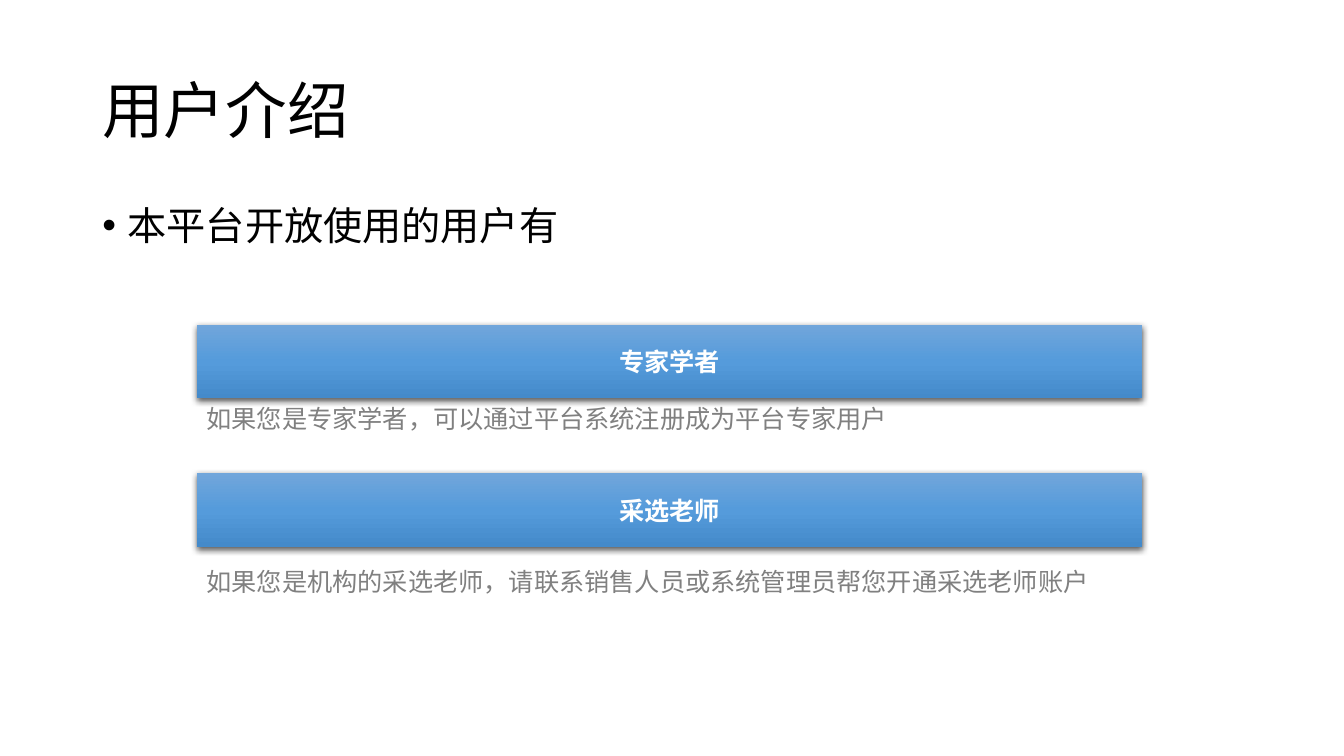
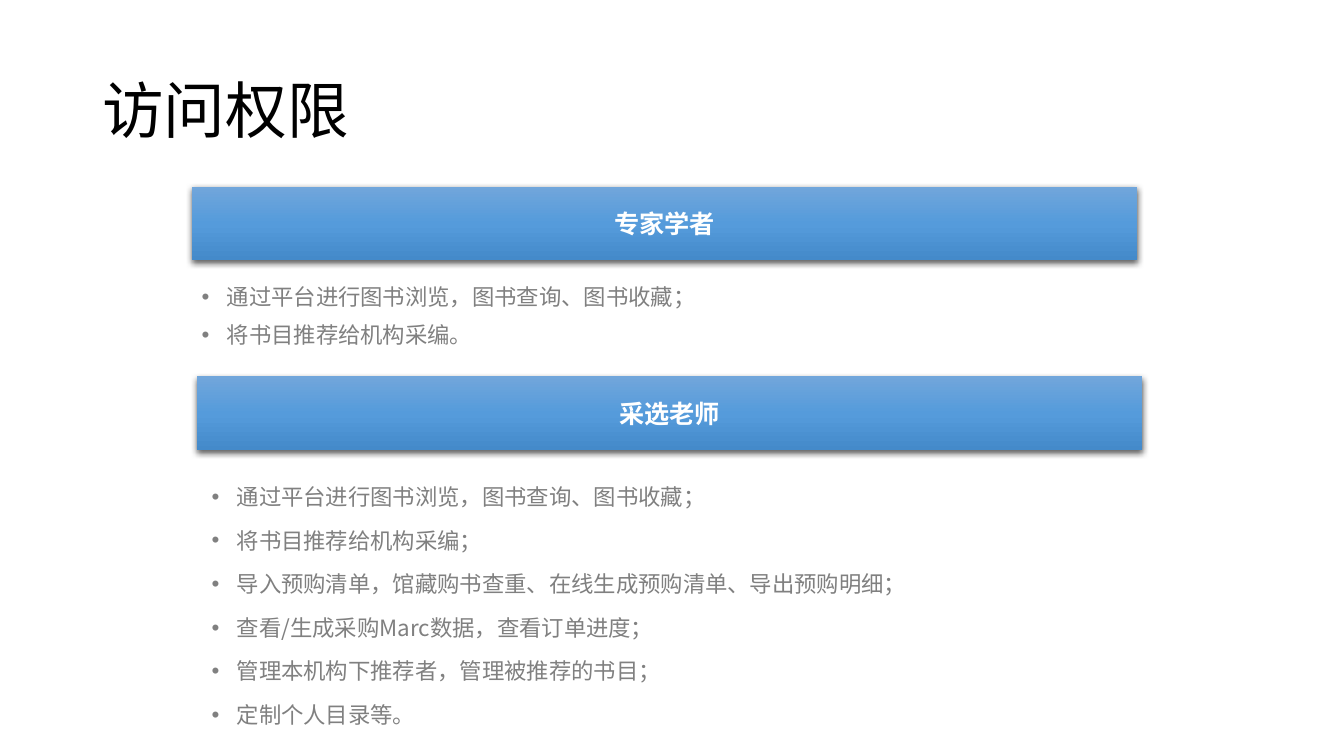
from dataclasses import dataclass

from lxml import etree
from pptx import Presentation
from pptx import util as u
from pptx.dml import color
from pptx.enum import shapes, text
from pptx.oxml import ns, parse_xml

WIDTH, HEIGHT = u.Inches(13.333), u.Inches(7.5)
BLANK_LAYOUT = 6


@dataclass(frozen=True)
class Theme:
    font: str = "Noto Sans CJK SC"
    ink: str = "000000"
    grey: str = "808080"
    white: str = "FFFFFF"
    bar_stops: tuple = ((0, "71A6DB"), (50, "559BDB"), (100, "448ACA"))
    title_size: int = 44
    lead_size: int = 28
    label_size: int = 18
    item_size: int = 16


THEME = Theme()

# Shares of the slide, in percent of its width or height
MARGIN, CONTENT_WIDTH = 6.88, 86.25
BAR_LEFT, BAR_WIDTH, BAR_HEIGHT = 14.63, 70.37, 9.75
INDENT_STEP = 0.37


def area(left, top, width, height):
    """Turn percentages of the slide into lengths."""
    return (int(WIDTH * left / 100), int(HEIGHT * top / 100),
            int(WIDTH * width / 100), int(HEIGHT * height / 100))


def add_span(para, words, size, ink, bold=False):
    span = para.add_run()
    span.text = words
    span.font.name = THEME.font
    span.font.size = u.Pt(size)
    span.font.bold = bold
    span.font.color.rgb = color.RGBColor.from_string(ink)
    east_asian = etree.SubElement(span.font._element, ns.qn("a:ea"))
    east_asian.set("typeface", THEME.font)


def add_bullet(para):
    props = para._p.get_or_add_pPr()
    props.set("marL", str(u.Inches(0.25)))
    props.set("indent", str(-u.Inches(0.25)))
    etree.SubElement(props, ns.qn("a:buFont")).set("typeface", "Arial")
    etree.SubElement(props, ns.qn("a:buChar")).set("char", "•")


def add_box(page, place):
    frame = page.shapes.add_textbox(*area(*place)).text_frame
    frame.word_wrap = True
    return frame


def add_title(page, words):
    frame = add_box(page, (MARGIN, 5.33, CONTENT_WIDTH, 19.33))
    frame.vertical_anchor = text.MSO_ANCHOR.MIDDLE
    para = frame.paragraphs[0]
    para.line_spacing = 0.9
    add_span(para, words, THEME.title_size, THEME.ink)


def add_list(page, place, items, size=THEME.item_size, ink=THEME.grey, spacing=0.9):
    frame = add_box(page, place)
    for index, words in enumerate(items):
        para = frame.add_paragraph() if index else frame.paragraphs[0]
        add_bullet(para)
        para.line_spacing = spacing
        if index:
            para.space_before = u.Pt(10)
        add_span(para, words, size, ink)


def add_caption(page, top, words):
    frame = add_box(page, (BAR_LEFT, top, BAR_WIDTH, 5.33))
    frame.auto_size = text.MSO_AUTO_SIZE.SHAPE_TO_FIT_TEXT
    add_span(frame.paragraphs[0], words, THEME.label_size, THEME.grey)


def style_bar(bar):
    """Give the bar its vertical gradient and soft shadow below."""
    bar.line.fill.background()
    bar.shadow.inherit = False
    props = bar._element.spPr
    stops = "".join(
        f'<a:gs pos="{share * 1000}"><a:srgbClr val="{tone}"/></a:gs>'
        for share, tone in THEME.bar_stops)
    gradient = parse_xml(
        f'<a:gradFill {ns.nsdecls("a")} rotWithShape="1"><a:gsLst>{stops}</a:gsLst>'
        '<a:lin ang="5400000" scaled="0"/></a:gradFill>')
    props.find(ns.qn("a:prstGeom")).addnext(gradient)
    shadow = parse_xml(
        f'<a:outerShdw {ns.nsdecls("a")} blurRad="{u.Pt(4.5)}" dist="{u.Pt(1.5)}" '
        'dir="5400000" algn="ctr" rotWithShape="0">'
        '<a:srgbClr val="000000"><a:alpha val="63000"/></a:srgbClr></a:outerShdw>')
    props.find(ns.qn("a:effectLst")).append(shadow)


def add_bar(page, top, words, left=BAR_LEFT):
    bar = page.shapes.add_shape(shapes.MSO_SHAPE.RECTANGLE,
                                *area(left, top, BAR_WIDTH, BAR_HEIGHT))
    style_bar(bar)
    bar.text_frame.vertical_anchor = text.MSO_ANCHOR.MIDDLE
    para = bar.text_frame.paragraphs[0]
    para.alignment = text.PP_ALIGN.CENTER
    add_span(para, words, THEME.label_size, THEME.white, bold=True)


def add_page(deck, title):
    page = deck.slides.add_slide(deck.slide_layouts[BLANK_LAYOUT])
    add_title(page, title)
    return page


def build_users(deck):
    page = add_page(deck, "用户介绍")
    add_list(page, (MARGIN, 26.67, CONTENT_WIDTH, 10), ["本平台开放使用的用户有"],
             THEME.lead_size, THEME.ink)
    add_bar(page, 42.93, "专家学者")
    add_caption(page, 52.67, "如果您是专家学者，可以通过平台系统注册成为平台专家用户")
    add_bar(page, 62.6, "采选老师")
    add_caption(page, 74.27, "如果您是机构的采选老师，请联系销售人员或系统管理员帮您开通采选老师账户")


def build_permissions(deck):
    page = add_page(deck, "访问权限")
    browse = "通过平台进行图书浏览，图书查询、图书收藏；"
    recommend = "将书目推荐给机构采编"
    expert_left = BAR_LEFT - INDENT_STEP
    add_bar(page, 24.67, "专家学者", expert_left)
    add_list(page, (expert_left, 37.2, BAR_WIDTH, 12), [browse, recommend + "。"])
    add_bar(page, 49.8, "采选老师")
    add_list(page, (BAR_LEFT + INDENT_STEP, 62.93, BAR_WIDTH, 37.07), [
        browse,
        recommend + "；",
        "导入预购清单，馆藏购书查重、在线生成预购清单、导出预购明细；",
        "查看/生成采购Marc数据，查看订单进度；",
        "管理本机构下推荐者，管理被推荐的书目；",
        "定制个人目录等。",
    ], spacing=1.1)


def main():
    deck = Presentation()
    deck.slide_width, deck.slide_height = WIDTH, HEIGHT
    build_users(deck)
    build_permissions(deck)
    deck.save("out.pptx")


if __name__ == "__main__":
    main()
